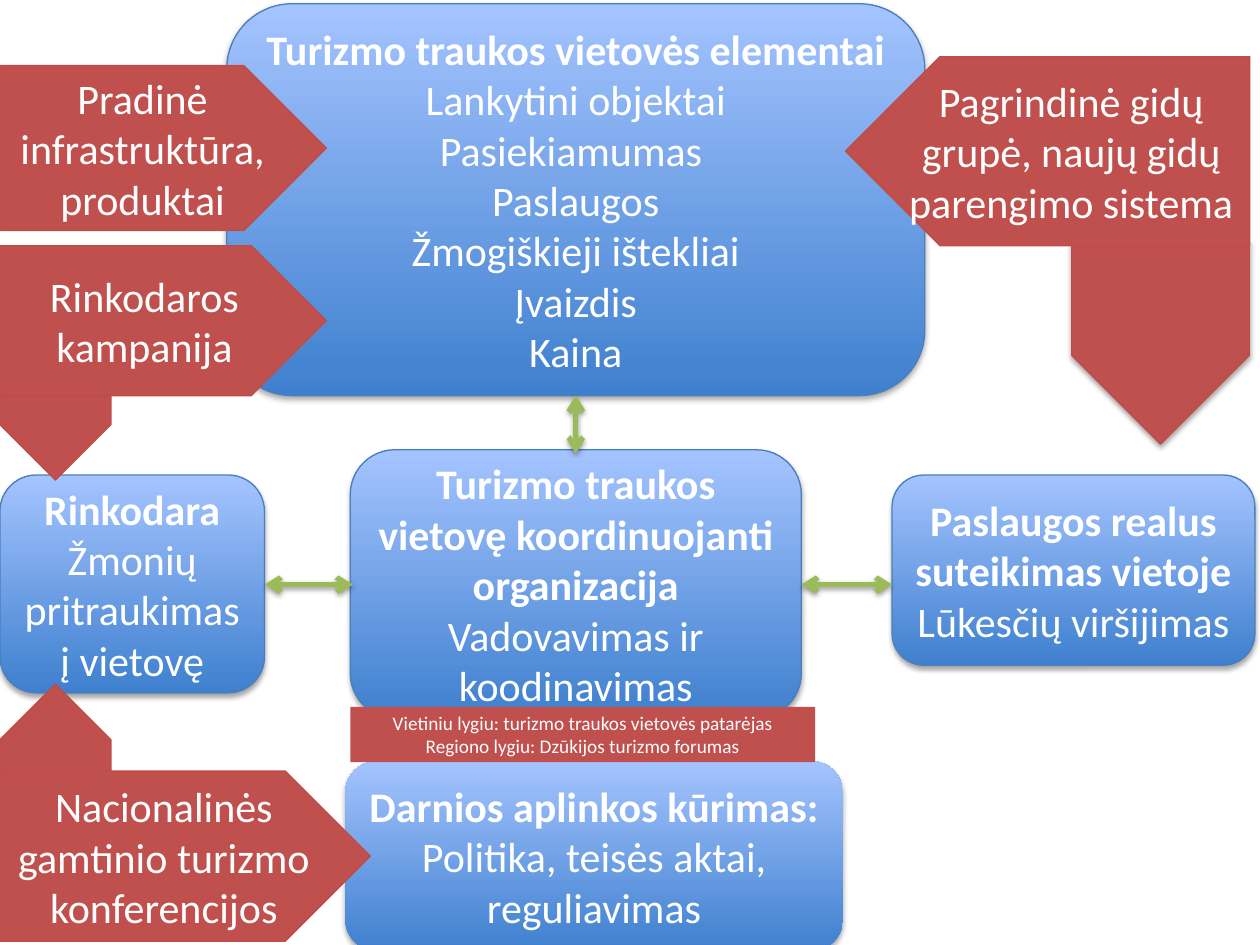
import pptx
import pptx.dml.color
import pptx.enum.shapes
import pptx.enum.text
import pptx.oxml
import pptx.oxml.ns
import pptx.util
from pptx.util import Inches

COLORS = {
    "white": "FFFFFF",
    "blue_dark": "3F80CE",
    "blue_light": "A4C4FF",
    "blue_line": "4B7EBC",
    "red": "C0504D",
    "red_line": "BF4C48",
    "green": "9BBB59",
    "shadow": "000000",
}
SHAPES = pptx.enum.shapes.MSO_SHAPE


def rgb(name):
    return pptx.dml.color.RGBColor.from_string(COLORS[name])


class Diagram:
    font = "Calibri"
    text_size = 24
    note_size = 11

    def __init__(self, slide):
        self.slide = slide

    def add_shadow(self, properties, distance, opacity):
        effects = properties.find(pptx.oxml.ns.qn("a:effectLst"))
        if effects is None:
            effects = pptx.oxml.parse_xml(f"<a:effectLst {pptx.oxml.ns.nsdecls('a')}/>")
            properties.append(effects)
        effects.append(pptx.oxml.parse_xml(
            f'<a:outerShdw {pptx.oxml.ns.nsdecls("a")} blurRad="{pptx.util.Pt(3.1)}" '
            f'dist="{pptx.util.Pt(distance)}" dir="5400000" rotWithShape="0">'
            f'<a:srgbClr val="{COLORS["shadow"]}"><a:alpha val="{opacity * 1000}"/></a:srgbClr>'
            f'</a:outerShdw>'))

    def add_base(self, kind, left, top, width, height, line, shadow):
        shape = self.slide.shapes.add_shape(
            kind, Inches(left), Inches(top), Inches(width), Inches(height))
        if line:
            shape.line.color.rgb = rgb(line)
            shape.line.width = pptx.util.Pt(0.75)
        else:
            shape.line.fill.background()
        shape.shadow.inherit = False
        if shadow:
            self.add_shadow(shape.element.spPr, 1.8, 35)
        return shape

    def set_text(self, shape, lines, size, bold_first=False):
        frame = shape.text_frame
        frame.word_wrap = True
        frame.vertical_anchor = pptx.enum.text.MSO_ANCHOR.MIDDLE
        frame.text = "\n".join(lines)
        for index, paragraph in enumerate(frame.paragraphs):
            paragraph.alignment = pptx.enum.text.PP_ALIGN.CENTER
            for run in paragraph.runs:
                run.font.name = self.font
                run.font.size = pptx.util.Pt(size)
                run.font.bold = bold_first and index == 0
                run.font.color.rgb = rgb("white")

    def add_box(self, left, top, width, height, lines, line="blue_line"):
        shape = self.add_base(SHAPES.ROUNDED_RECTANGLE, left, top, width, height, line, True)
        shape.fill.gradient()
        shape.fill.gradient_angle = 90
        for stop, color in zip(shape.fill.gradient_stops, ("blue_dark", "blue_light")):
            stop.color.rgb = rgb(color)
        self.set_text(shape, lines, self.text_size, bold_first=True)

    def add_pentagon(self, left, top, width, height, text="", rotation=0,
                     flipped=False, shadow=False):
        shape = self.add_base(SHAPES.PENTAGON, left, top, width, height, "red_line", shadow)
        shape.fill.solid()
        shape.fill.fore_color.rgb = rgb("red")
        shape.rotation = rotation
        if flipped:
            shape.element.spPr.xfrm.set("flipH", "1")
        if text:
            self.set_text(shape, [text], self.text_size)

    def add_note(self, left, top, width, height, lines):
        shape = self.add_base(SHAPES.RECTANGLE, left, top, width, height, None, False)
        shape.fill.solid()
        shape.fill.fore_color.rgb = rgb("red")
        self.set_text(shape, lines, self.note_size)

    def add_double_arrow(self, start, end):
        connector = self.slide.shapes.add_connector(
            pptx.enum.shapes.MSO_CONNECTOR.STRAIGHT,
            *(Inches(value) for value in start + end))
        connector.line.color.rgb = rgb("green")
        connector.line.width = pptx.util.Pt(3)
        properties = connector.element.spPr
        line = properties.find(pptx.oxml.ns.qn("a:ln"))
        for tag in ("headEnd", "tailEnd"):
            line.append(pptx.oxml.parse_xml(
                f'<a:{tag} {pptx.oxml.ns.nsdecls("a")} type="arrow"/>'))
        self.add_shadow(properties, 1.6, 38)


def main():
    presentation = pptx.Presentation()
    presentation.slide_width = Inches(10)
    presentation.slide_height = Inches(7.5)
    diagram = Diagram(presentation.slides.add_slide(presentation.slide_layouts[6]))

    diagram.add_box(0, 3.77, 2.1, 1.73, ["Rinkodara", "Žmonių pritraukimas į vietovę"])
    diagram.add_box(7.08, 3.77, 2.88, 1.51,
                    ["Paslaugos realus suteikimas vietoje", "Lūkesčių viršijimas"])
    diagram.add_box(1.8, 0.03, 5.54, 3.11,
                    ["Turizmo traukos vietovės elementai", "Lankytini objektai",
                     "Pasiekiamumas ", "Paslaugos", "Žmogiškieji ištekliai",
                     "Įvaizdis", "Kaina"])
    diagram.add_box(2.78, 3.57, 3.58, 2.13,
                    ["Turizmo traukos vietovę koordinuojanti organizacija",
                     "Vadovavimas ir koodinavimas"])
    diagram.add_box(2.74, 6.04, 3.95, 1.51,
                    ["Darnios aplinkos kūrimas:", "Politika, teisės aktai, reguliavimas"],
                    line=None)

    diagram.add_double_arrow((4.57, 3.14), (4.57, 3.6))
    diagram.add_double_arrow((2.1, 4.64), (2.8, 4.64))
    diagram.add_double_arrow((6.36, 4.64), (7.08, 4.64))

    diagram.add_pentagon(0, 0.52, 2.59, 1.31, "Pradinė infrastruktūra, produktai")
    diagram.add_pentagon(8.4, 2.01, 1.62, 1.41, rotation=270, flipped=True, shadow=True)
    diagram.add_pentagon(6.71, 0.45, 3.21, 1.5,
                         "Pagrindinė gidų grupė, naujų gidų parengimo sistema", flipped=True)
    diagram.add_pentagon(-0.12, 2.81, 1.12, 0.88, rotation=90)
    diagram.add_pentagon(0, 1.95, 2.59, 1.19, "Rinkodaros kampanija")
    diagram.add_note(2.78, 5.61, 3.69, 0.44,
                     ["Vietiniu lygiu: turizmo traukos vietovės patarėjas",
                      "Regiono lygiu: Dzūkijos turizmo forumas"])
    diagram.add_pentagon(-0.56, 5.99, 2, 0.88, rotation=270)
    diagram.add_pentagon(0, 6.12, 2.94, 1.35, "Nacionalinės gamtinio turizmo konferencijos")

    presentation.save("out.pptx")


if __name__ == "__main__":
    main()
